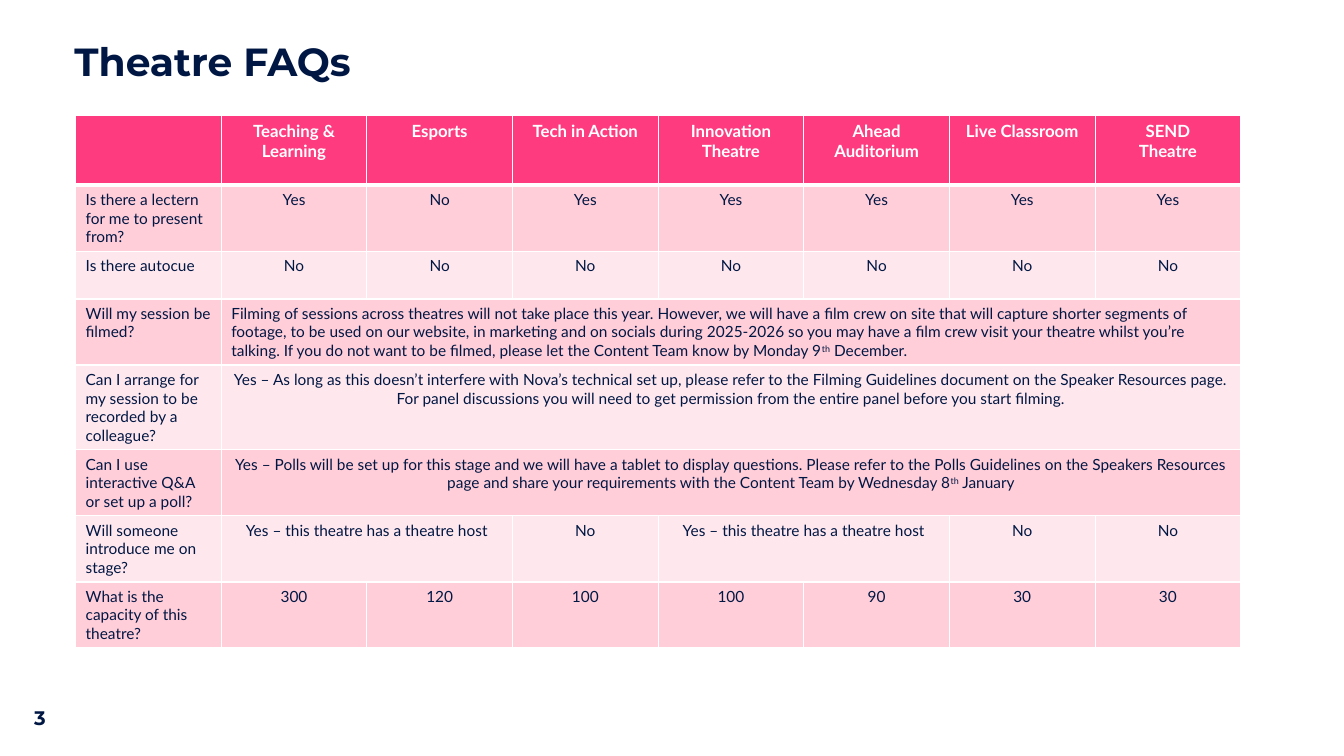
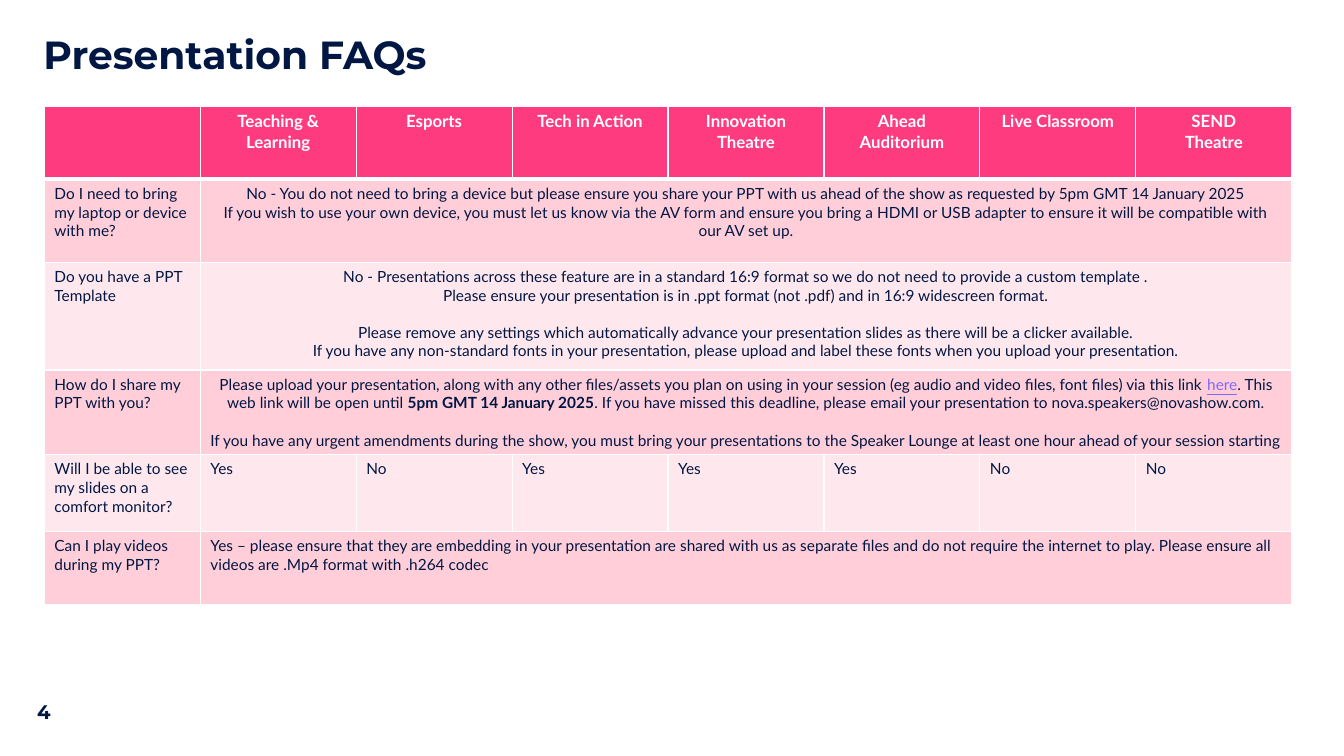
"""Build two theatre and presentation FAQ slides for event speakers."""
from dataclasses import dataclass

from lxml import etree
from pptx import Presentation
from pptx.dml.color import RGBColor
from pptx.enum.text import MSO_ANCHOR, PP_ALIGN
from pptx.oxml.ns import qn
from pptx.util import Pt

COLORS = {
    "navy": "001744",
    "pink": "FF3B80",
    "rose": "FFCED8",
    "blush": "FFE8ED",
    "white": "FFFFFF",
    "link": "8069FF",
}
TITLE_FONT, BODY_FONT = "Montserrat", "Lato"
BODY_SIZE, HEADER_SIZE = 11, 12
LINE_GAP = 13.2
LEFT, CENTER = PP_ALIGN.LEFT, PP_ALIGN.CENTER


@dataclass
class Line:
    """A paragraph made of (text, style) runs, with an optional gap above."""
    runs: tuple
    gap: float = 0


@dataclass
class Row:
    """A question with (answer lines, column span) pairs."""
    question: str
    answers: list
    align: PP_ALIGN = CENTER


def plain(text, gap=0):
    """Return a paragraph with one unstyled run."""
    return Line(((text, ""),), gap)


def single(*texts):
    """Return one answer for each theatre."""
    return [([plain(text)], 1) for text in texts]


def across(*lines):
    """Return one answer spanning all theatres."""
    return [(lines, len(THEATRES))]


THEATRES = ["Teaching & Learning", "Esports", "Tech in Action", "Innovation Theatre",
            "Ahead\nAuditorium", "Live Classroom", "SEND\nTheatre"]
HOST = ([plain("Yes – this theatre has a theatre host")], 2)
NO_HOST = ([plain("No")], 1)

THEATRE_ROWS = [
    Row("Is there a lectern for me to present from?",
        single("Yes", "No", "Yes", "Yes", "Yes", "Yes", "Yes")),
    Row("Is there autocue", single(*["No"] * len(THEATRES))),
    Row("Will my session be filmed?", across(Line((
        ("Filming of sessions across theatres will not take place this year. However, we will "
         "have a film crew on site that will capture shorter segments of footage, to be used on "
         "our website, in marketing and on socials during 2025-2026 so you may have a film crew "
         "visit your theatre whilst you’re talking. If you do not want to be filmed, please let "
         "the Content Team know by Monday 9", ""),
        ("th", "superscript"), (" December.", "")))), LEFT),
    Row("Can I arrange for my session to be recorded by a colleague?", across(plain(
        "Yes – As long as this doesn’t interfere with Nova’s technical set up, please refer to "
        "the Filming Guidelines document on the Speaker Resources page. For panel discussions "
        "you will need to get permission from the entire panel before you start filming."))),
    Row("Can I use interactive Q&A or set up a poll?", across(Line((
        ("Yes – Polls will be set up for this stage and we will have a tablet to display "
         "questions. Please refer to the Polls Guidelines on the Speakers Resources page and "
         "share your requirements with the Content Team by Wednesday 8", ""),
        ("th", "superscript"), (" January", ""))))),
    Row("Will someone introduce me on stage?", [HOST, NO_HOST, HOST, NO_HOST, NO_HOST]),
    Row("What is the capacity of this theatre?",
        single("300", "120", "100", "100", "90", "30", "30")),
]

PRESENTATION_ROWS = [
    Row("Do I need to bring my laptop or device with me?", across(
        plain("No - You do not need to bring a device but please ensure you share your PPT with "
              "us ahead of the show as requested by 5pm GMT 14 January 2025"),
        plain("If you wish to use your own device, you must let us know via the AV form and "
              "ensure you bring a HDMI or USB adapter to ensure it will be compatible with our "
              "AV set up."))),
    Row("Do you have a PPT Template", across(
        plain("No - Presentations across these feature are in a standard 16:9 format so we do "
              "not need to provide a custom template ."),
        plain("Please ensure your presentation is in .ppt format (not .pdf) and in 16:9 "
              "widescreen format."),
        plain("Please remove any settings which automatically advance your presentation slides "
              "as there will be a clicker available.", LINE_GAP),
        plain("If you have any non-standard fonts in your presentation, please upload and label "
              "these fonts when you upload your presentation."))),
    Row("How do I share my PPT with you?", across(
        Line((
            ("Please upload your presentation, along with any other files/assets you plan on "
             "using in your session (eg audio and video files, font files) via this link ", ""),
            ("here", "link"), (". This web link will be open until ", ""),
            ("5pm GMT 14 January 2025", "bold"),
            (". If you have missed this deadline, please email your presentation to "
             "nova.speakers@novashow.com.", ""))),
        plain("If you have any urgent amendments during the show, you must bring your "
              "presentations to the Speaker Lounge at least one hour ahead of your session "
              "starting", LINE_GAP))),
    Row("Will I be able to see my slides on a comfort monitor?",
        single("Yes", "No", "Yes", "Yes", "Yes", "No", "No"), LEFT),
    Row("Can I play videos during my PPT?", across(plain(
        "Yes – please ensure that they are embedding in your presentation are shared with us as "
        "separate files and do not require the internet to play. Please ensure all videos are "
        ".Mp4 format with .h264 codec")), LEFT),
]

SLIDES = [
    {"title": "Theatre FAQs", "title_at": (46, 26.6), "number": "3", "number_at": (17.3, 500.4),
     "table_at": (54, 82.4), "table_width": 832.3, "rows": THEATRE_ROWS,
     "heights": [50, 46.6, 34, 46.6, 60.4, 46.6, 47, 46.6]},
    {"title": "Presentation FAQs", "title_at": (23.8, 21.8), "number": "4",
     "number_at": (19.4, 496.1), "table_at": (31.7, 75.9), "table_width": 891.2,
     "rows": PRESENTATION_ROWS, "heights": [52, 59.4, 77, 60.2, 55, 52.4]},
]


def color(name):
    """Return a palette colour."""
    return RGBColor.from_string(COLORS[name])


def set_font(font, name, size, tint, bold=False):
    """Format a font."""
    font.name, font.size, font.bold = name, Pt(size), bold
    font.color.rgb = color(tint)


def style_run(run, style):
    """Apply a named run style."""
    if style == "superscript":
        run._r.get_or_add_rPr().set("baseline", "30000")
    elif style == "bold":
        run.font.bold = True
    elif style == "link":
        run.font.underline = True
        run.font.color.rgb = color("link")


def write(frame, lines, align, *font):
    """Fill a text frame with lines."""
    for index, line in enumerate(lines):
        paragraph = frame.add_paragraph() if index else frame.paragraphs[0]
        paragraph.alignment = align
        if line.gap:
            paragraph.space_before = Pt(line.gap)
        set_font(paragraph.font, *font)
        for text, style in line.runs:
            run = paragraph.add_run()
            run.text = text
            style_run(run, style)


def paint(cell, fill, top, bottom):
    """Give a cell its white borders and fill."""
    properties = cell._tc.get_or_add_tcPr()
    for side, width in (("L", 1), ("R", 1), ("T", top), ("B", bottom)):
        line = etree.SubElement(properties, qn(f"a:ln{side}"), w=str(Pt(width)))
        solid = etree.SubElement(line, qn("a:solidFill"))
        etree.SubElement(solid, qn("a:srgbClr"), val=COLORS["white"])
    cell.fill.solid()
    cell.fill.fore_color.rgb = color(fill)


def add_faq_table(slide, content):
    """Add the question and answer table."""
    rows, heights = content["rows"], content["heights"]
    columns = len(THEATRES) + 1
    left, top = content["table_at"]
    width = content["table_width"]
    table = slide.shapes.add_table(len(heights), columns, Pt(left), Pt(top),
                                   Pt(width), Pt(sum(heights))).table
    for column in table.columns:
        column.width = Pt(width / columns)
    for index, height in enumerate(heights):
        table.rows[index].height = Pt(height)
        fill = "pink" if index == 0 else ("blush", "rose")[index % 2]
        for cell in table.rows[index].cells:
            paint(cell, fill, 3 if index == 1 else 1, 3 if index == 0 else 1)
    for index, theatre in enumerate(THEATRES, 1):
        write(table.cell(0, index).text_frame, [plain(text) for text in theatre.split("\n")],
              CENTER, BODY_FONT, HEADER_SIZE, "white", True)
    for index, row in enumerate(rows, 1):
        position = 0
        for lines, span in [([plain(row.question)], 1), *row.answers]:
            cell = table.cell(index, position)
            if span > 1:
                cell.merge(table.cell(index, position + span - 1))
            write(cell.text_frame, lines, row.align if position else LEFT,
                  BODY_FONT, BODY_SIZE, "navy")
            position += span


def add_slide(presentation, content):
    """Add a slide with title, table and number."""
    slide = presentation.slides.add_slide(presentation.slide_layouts[5])
    title = slide.shapes.title
    title.left, title.top = (Pt(value) for value in content["title_at"])
    title.width, title.height = Pt(570), Pt(48)
    title.text_frame.vertical_anchor = MSO_ANCHOR.TOP
    title.text_frame.word_wrap = True
    write(title.text_frame, [plain(content["title"])], LEFT, TITLE_FONT, 28, "navy", True)
    title.text_frame.paragraphs[0].line_spacing = 0.9
    add_faq_table(slide, content)
    left, top = content["number_at"]
    number = slide.shapes.add_textbox(Pt(left), Pt(top), Pt(32.4), Pt(24.5))
    number.text_frame.word_wrap = True
    write(number.text_frame, [plain(content["number"])], LEFT, TITLE_FONT, 14, "navy", True)


def main():
    """Build and save the presentation."""
    presentation = Presentation()
    presentation.slide_width, presentation.slide_height = Pt(960), Pt(540)
    for content in SLIDES:
        add_slide(presentation, content)
    presentation.save("out.pptx")


if __name__ == "__main__":
    main()
